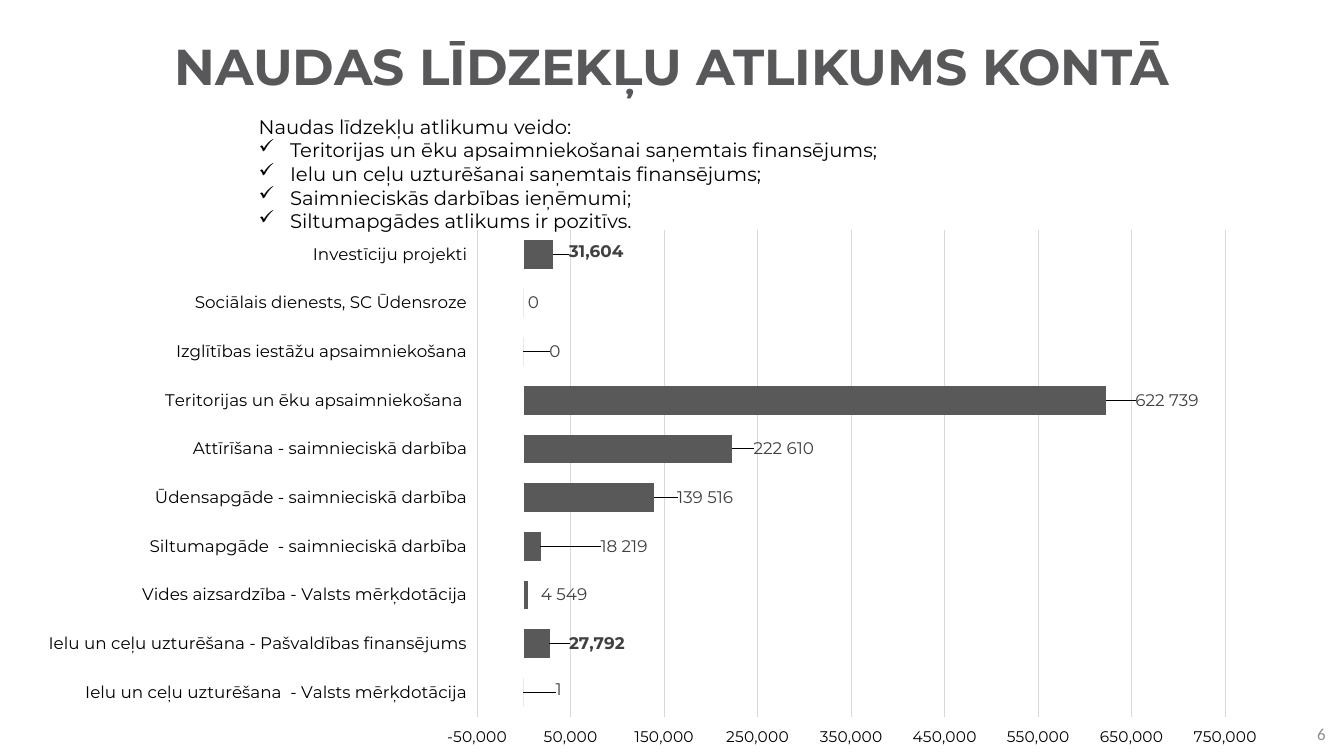
from lxml import etree
from pptx import Presentation
from pptx.chart.data import CategoryChartData
from pptx.dml.color import RGBColor
from pptx.enum.chart import XL_CHART_TYPE, XL_LABEL_POSITION, XL_TICK_LABEL_POSITION, XL_TICK_MARK
from pptx.enum.text import MSO_ANCHOR, PP_ALIGN
from pptx.oxml import parse_xml
from pptx.oxml.ns import nsdecls, qn
from pptx.util import Cm, Pt

BAR = XL_CHART_TYPE.BAR_CLUSTERED
END = XL_LABEL_POSITION.OUTSIDE_END
LOW = XL_TICK_LABEL_POSITION.LOW
NONE = XL_TICK_MARK.NONE
TOP, MID = MSO_ANCHOR.TOP, MSO_ANCHOR.MIDDLE
LEFT, MIDDLE, RIGHT, EVEN = PP_ALIGN.LEFT, PP_ALIGN.CENTER, PP_ALIGN.RIGHT, PP_ALIGN.JUSTIFY

COLORS = {"title": "58585B", "text": "000000", "page": "8C8C8C",
          "bar": "595959", "label": "404040", "grid": "D9D9D9"}

INTRO = "Naudas līdzekļu atlikumu veido:"
POINTS = ["Teritorijas un ēku apsaimniekošanai saņemtais finansējums;",
          "Ielu un ceļu uzturēšanai saņemtais finansējums;",
          "Saimnieciskās darbības ieņēmumi;",
          "Siltumapgādes atlikums ir pozitīvs."]

FUNDS = [
    ("Ielu un ceļu uzturēšana  - Valsts mērķdotācija", 1, "1", 0.022, -0.004),
    ("Ielu un ceļu uzturēšana - Pašvaldības finansējums", 27792, None, 0.012, 0),
    ("Vides aizsardzība - Valsts mērķdotācija", 4549, "4 549", 0.007, 0),
    ("Siltumapgāde  - saimnieciskā darbība", 18219, "18 219", 0.044, 0),
    ("Ūdensapgāde - saimnieciskā darbība", 139516, "139 516", 0.015, 0),
    ("Attīrīšana - saimnieciskā darbība", 222610, "222 610", 0.014, 0),
    ("Teritorijas un ēku apsaimniekošana ", 622739, "622 739", 0.02, 0),
    ("Izglītības iestāžu apsaimniekošana", 0, "0", 0.017, 0),
    ("Sociālais dienests, SC Ūdensroze", 0, "0", 0, 0),
    ("Investīciju projekti", 31604, None, 0.009, -0.005),
]


class Deck:
    """Holds the style and the current slide, and draws each kind of element."""

    def __init__(self):
        self.show = Presentation()
        self.show.slide_width, self.show.slide_height = Cm(33.87), Cm(19.05)
        self.slide = self.show.slides.add_slide(self.show.slide_layouts[6])

    def font(self, font, size, color, bold=False, face="Montserrat"):
        font.name, font.size, font.bold = face, Pt(size), bold
        font.color.rgb = RGBColor.from_string(COLORS[color])

    def text(self, box, lines, size, color, align=LEFT, anchor=TOP, space=None, **look):
        frame = self.slide.shapes.add_textbox(*map(Cm, box)).text_frame
        frame.word_wrap, frame.vertical_anchor = True, anchor
        frame.text = "\n".join(lines)
        for para in frame.paragraphs:
            para.alignment, para.line_spacing = align, space
            self.font(para.runs[0].font, size, color, **look)
        return frame

    def check(self, para, indent):
        props = para._p.get_or_add_pPr()
        props.set("marL", str(Cm(indent)))
        props.set("indent", str(-Cm(indent)))
        etree.SubElement(props, qn("a:buFont")).set("typeface", "Wingdings")
        etree.SubElement(props, qn("a:buChar")).set("char", "ü")

    def layout(self, **parts):
        rows = "".join(f'<c:{key} val="{val}"/>' for key, val in parts.items())
        return parse_xml(f"<c:layout {nsdecls('c')}><c:manualLayout>{rows}"
                         "</c:manualLayout></c:layout>")

    def axis(self, axis, size):
        axis.major_tick_mark = axis.minor_tick_mark = NONE
        axis.tick_label_position = LOW
        axis.format.line.fill.background()
        self.font(axis.tick_labels.font, size, "text")

    def label(self, point, text, right, down):
        label = point.data_label
        if text is None:
            self.font(label.font, 12, "label", bold=True)
        else:
            label.text_frame.text = text
            self.font(label.text_frame.paragraphs[0].runs[0].font, 12, "label")
        label.position = END
        if right or down:
            node = label._get_or_add_dLbl()
            node.insert(1, self.layout(x=right, y=down))

    def chart(self, box, funds):
        data = CategoryChartData(number_format="#,##0")
        data.categories = [fund[0] for fund in funds]
        data.add_series("Series 1", [fund[1] for fund in funds])
        chart = self.slide.shapes.add_chart(BAR, *map(Cm, box), data).chart
        chart.has_legend = chart.has_title = False
        self.font(chart.font, 10, "text", face="Calibri")
        area = chart._chartSpace.chart.plotArea
        for old in area.findall(qn("c:layout")):
            area.remove(old)
        area.insert(0, self.layout(layoutTarget="inner", xMode="edge", yMode="edge",
                                   x=0.345, y=0.069, w=0.591, h=0.876))

        self.axis(chart.category_axis, 12)
        scale = chart.value_axis
        self.axis(scale, 11)
        scale.minimum_scale, scale.maximum_scale, scale.major_unit = -50000, 750000, 100000
        scale.tick_labels.number_format = "#,##0"
        scale.tick_labels.number_format_is_linked = False
        grid = scale.major_gridlines.format.line
        grid.width = Pt(0.75)
        grid.color.rgb = RGBColor.from_string(COLORS["grid"])

        plot = chart.plots[0]
        plot.gap_width, plot.vary_by_categories = 70, False
        bars = plot.series[0]
        bars.invert_if_negative = False
        bars.format.fill.solid()
        bars.format.fill.fore_color.rgb = RGBColor.from_string(COLORS["bar"])
        labels = bars.data_labels
        labels.show_value, labels.position = True, END
        labels.number_format, labels.number_format_is_linked = "#,##0", False
        self.font(labels.font, 12, "label", bold=True)
        for place, fund in enumerate(funds):
            self.label(bars.points[place], *fund[2:])


def main():
    deck = Deck()
    deck.text((2.36, 0.56, 29.16, 2.36), ["NAUDAS LĪDZEKĻU ATLIKUMS KONTĀ"],
              36, "title", MIDDLE, MID, 0.9, bold=True)
    deck.text((26.04, 17.98, 7.62, 1.02), ["6"], 12, "page", RIGHT, MID, face="Calibri")
    deck.chart((1.02, 4.83, 31.9, 14), FUNDS)
    notes = deck.text((6.27, 2.77, 27.4, 3.25), [INTRO, *POINTS], 14, "text", EVEN)
    for para in notes.paragraphs[1:]:
        deck.check(para, 0.79)
    deck.show.save("out.pptx")


if __name__ == "__main__":
    main()
